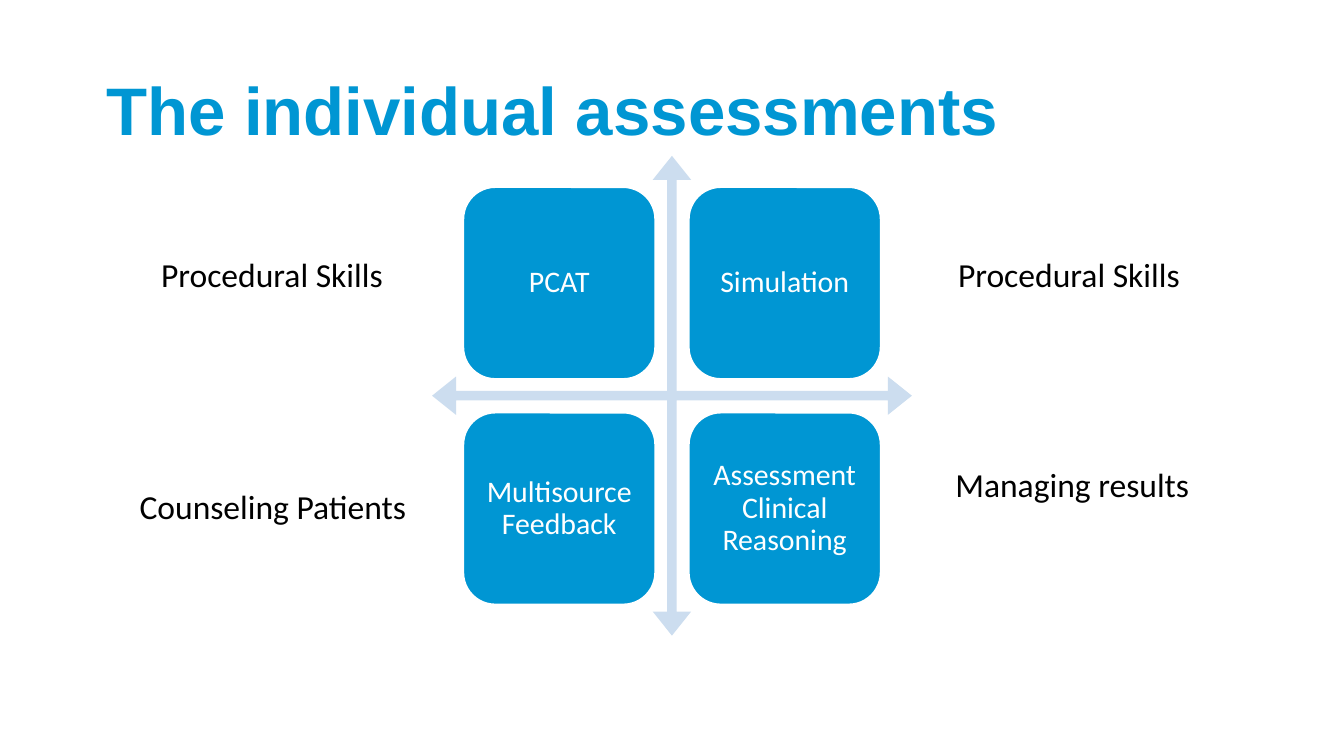
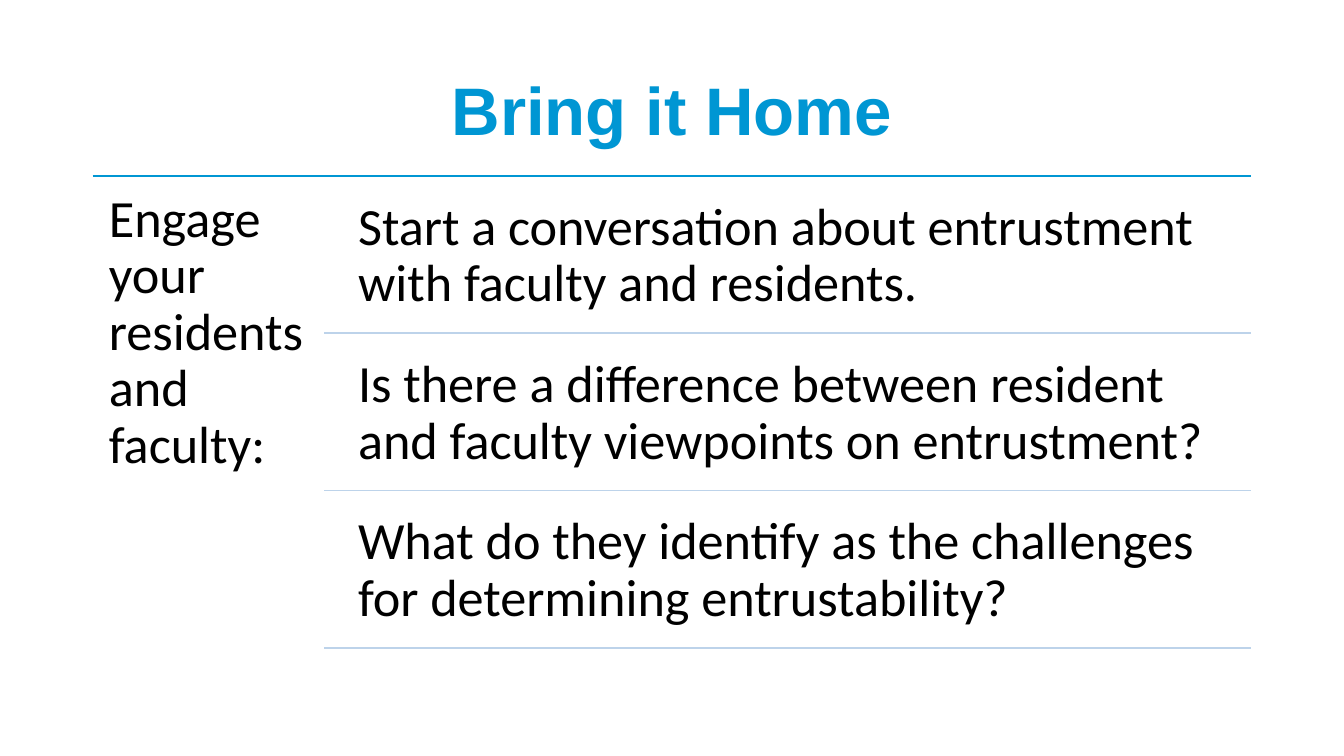
from pptx import Presentation
from pptx import util as u
from pptx.dml.color import RGBColor
from pptx.enum import shapes, text
from pptx.oxml.ns import qn
from lxml import etree

COLORS = {"blue": "0096D3", "arrow": "CCDDEF", "rule": "BDD3EA",
          "white": "FFFFFF", "black": "000000"}
WIDTH = 10
HEIGHT = WIDTH * 9 / 16
MARGIN = 0.69
CONTENT_W = WIDTH - 2 * MARGIN
LEFT, CENTER = text.PP_ALIGN.LEFT, text.PP_ALIGN.CENTER


def rgb(name):
    """Return a palette colour."""
    return RGBColor.from_string(COLORS[name])


def box(*lengths):
    """Turn inches into lengths."""
    return [u.Inches(n) for n in lengths]


def write(s, words, size, color, font="Calibri", align=LEFT, bold=False,
          spacing=None, inset=None, anchor=text.MSO_ANCHOR.TOP):
    """Put one formatted paragraph in a shape."""
    tf = s.text_frame
    tf.word_wrap = True
    tf.auto_size = text.MSO_AUTO_SIZE.NONE
    tf.vertical_anchor = anchor
    if inset is not None:
        tf.margin_left = tf.margin_right = u.Inches(inset)
        tf.margin_top = tf.margin_bottom = u.Inches(inset)
    p = tf.paragraphs[0]
    p.text = words
    p.alignment = align
    if spacing:
        p.line_spacing = spacing
    p.font.name, p.font.size, p.font.bold = font, u.Pt(size), bold
    p.font.color.rgb = rgb(color)


def add_titled_slide(prs, title, align=LEFT):
    """Add a slide with the shared title style."""
    sp = prs.slides.add_slide(prs.slide_layouts[5])
    s = sp.shapes.title
    s.left, s.top, s.width, s.height = box(MARGIN, 0.3, CONTENT_W, 1.09)
    write(s, title, 36, "blue", "Arial", align, True, 0.9,
          anchor=text.MSO_ANCHOR.MIDDLE)
    return sp


def add_filled(sp, kind, bounds, fill, line=None):
    """Add a flat preset shape."""
    s = sp.shapes.add_shape(kind, *box(*bounds))
    s.shadow.inherit = False
    s.fill.solid()
    s.fill.fore_color.rgb = rgb(fill)
    if line:
        s.line.color.rgb = rgb(line)
        s.line.width = u.Pt(1)
    else:
        s.line.fill.background()
    return s


def add_text(sp, words, bounds, size, **style):
    """Add a text box in black."""
    write(sp.shapes.add_textbox(*box(*bounds)), words, size, "black", **style)


def add_rule(sp, left, y, color):
    """Draw a horizontal rule to the right margin."""
    s = sp.shapes.add_connector(shapes.MSO_CONNECTOR.STRAIGHT,
                                *box(left, y, WIDTH - MARGIN, y))
    s.line.color.rgb = rgb(color)
    s.line.width = u.Pt(1)
    etree.SubElement(s._element.spPr, qn("a:effectLst"))


def add_matrix(sp, rows, top, size):
    """Draw a centred four-way arrow with a tile in each quarter."""
    left = (WIDTH - size) / 2
    s = add_filled(sp, shapes.MSO_SHAPE.QUAD_ARROW, (left, top, size, size), "arrow")
    for i, value in enumerate((0.02, 0.04, 0.05)):
        s.adjustments[i] = value
    tile, pad, pitch = 0.4 * size, 0.065 * size, 0.47 * size
    for r, row in enumerate(rows):
        for c, words in enumerate(row):
            bounds = (left + pad + c * pitch, top + pad + r * pitch, tile, tile)
            s = add_filled(sp, shapes.MSO_SHAPE.ROUNDED_RECTANGLE, bounds,
                           "blue", "white")
            write(s, words, 16, "white", align=CENTER, spacing=0.9, inset=0.07,
                  anchor=text.MSO_ANCHOR.MIDDLE)


def add_question_list(sp, heading, questions):
    """Set a heading column beside ruled rows of questions."""
    top, height, gap, row_h = 1.31, 3.57, 0.06, 1.11
    heading_w = 0.2 * CONTENT_W
    rule_left = MARGIN + heading_w
    text_left = rule_left + 0.13
    style = {"spacing": 0.9, "inset": 0.12}
    add_rule(sp, MARGIN, top, "blue")
    add_text(sp, heading, (MARGIN, top, heading_w, height), 28, **style)
    for i, question in enumerate(questions):
        y = top + gap + i * (row_h + gap)
        add_text(sp, question, (text_left, y, WIDTH - MARGIN - text_left, row_h),
                 28, **style)
        add_rule(sp, rule_left, y + row_h, "rule")


def main():
    """Build the two slides."""
    prs = Presentation()
    prs.slide_width, prs.slide_height = box(WIDTH, HEIGHT)

    sp = add_titled_slide(prs, "The individual assessments")
    add_matrix(sp, [("PCAT", "Simulation"),
                    ("Multisource Feedback", "Assessment Clinical Reasoning")],
               1.16, 3.57)
    for words, left, top, width in (("Procedural Skills", 1.1, 1.84, 2.05),
                                    ("Counseling Patients", 0.94, 3.57, 2.2),
                                    ("Procedural Skills", 7.03, 1.84, 2.05),
                                    ("Managing results", 7.01, 3.4, 2.05)):
        add_text(sp, words, (left, top, width, 0.4), 18)

    sp = add_titled_slide(prs, "Bring it Home", CENTER)
    add_question_list(sp, "Engage your residents and faculty:", [
        "Start a conversation about entrustment with faculty and residents.",
        "Is there a difference between resident and faculty viewpoints on entrustment?",
        "What do they identify as the challenges for determining entrustability?"])
    prs.save("out.pptx")


if __name__ == "__main__":
    main()
